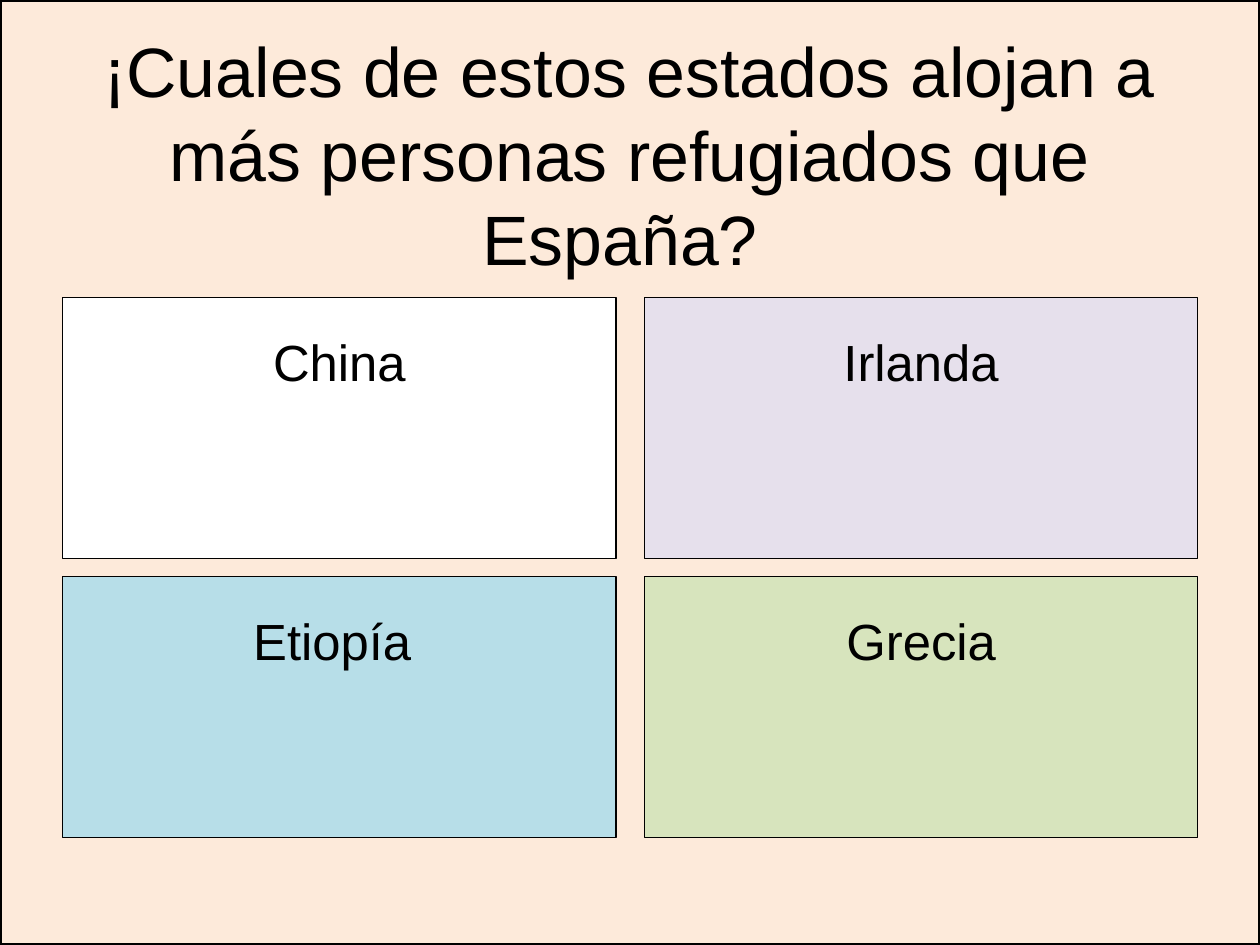
from pptx import Presentation
from pptx.dml.color import RGBColor
from pptx.enum.shapes import MSO_SHAPE
from pptx.enum.text import MSO_ANCHOR, PP_ALIGN
from pptx.util import Inches, Pt

RECT = MSO_SHAPE.RECTANGLE
TOP, MIDDLE = MSO_ANCHOR.TOP, MSO_ANCHOR.MIDDLE
CENTER = PP_ALIGN.CENTER

THEME = {
    "font": "Arial", "ink": "000000", "back": "FDEADA",
    "title": 44, "leading": 53, "label": 32,
    "white": "FFFFFF", "lilac": "E6E0EC", "blue": "B7DEE8", "green": "D7E4BD",
}

# Page of 28 by 21 cm
WIDE, HIGH = 28 / 2.54, 21 / 2.54

deck = Presentation()
deck.slide_width, deck.slide_height = Inches(WIDE), Inches(HIGH)
slide = deck.slides.add_slide(deck.slide_layouts[6])


def add_box(left, top, width, height, fill, line):
    box = slide.shapes.add_shape(
        RECT, Inches(left), Inches(top), Inches(width), Inches(height))
    box.shadow.inherit = False
    box.fill.solid()
    box.fill.fore_color.rgb = RGBColor.from_string(THEME[fill])
    box.line.color.rgb = RGBColor.from_string(THEME["ink"])
    box.line.width = Pt(line)
    return box


def add_text(shape, text, size, anchor, inset=0):
    frame = shape.text_frame
    frame.word_wrap = True
    frame.vertical_anchor = anchor
    frame.margin_left = frame.margin_right = frame.margin_bottom = 0
    frame.margin_top = Inches(inset)
    para = frame.paragraphs[0]
    para.alignment = CENTER
    run = para.add_run()
    run.text = text
    run.font.name = THEME["font"]
    run.font.size = Pt(THEME[size])
    run.font.color.rgb = RGBColor.from_string(THEME["ink"])
    return para


# Framed background
add_box(0, 0, WIDE, HIGH, "back", 2)

# Question
title = slide.shapes.add_textbox(
    Inches(0.55), Inches(0.31), Inches(9.92), Inches(2.06))
para = add_text(
    title,
    "¡Cuales de estos estados alojan a más personas refugiados que España? ",
    "title", MIDDLE)
para.line_spacing = Pt(THEME["leading"])

# Two by two grid of answers, clockwise
answers = [
    ("China", "white", 0, 0), ("Irlanda", "lilac", 0, 1),
    ("Grecia", "green", 1, 1), ("Etiopía ", "blue", 1, 0),
]
for name, fill, row, col in answers:
    card = add_box(0.55 + col * 5.09, 2.6 + row * 2.44, 4.84, 2.29, fill, 0.75)
    add_text(card, name, "label", TOP, 0.29)

deck.save("out.pptx")
